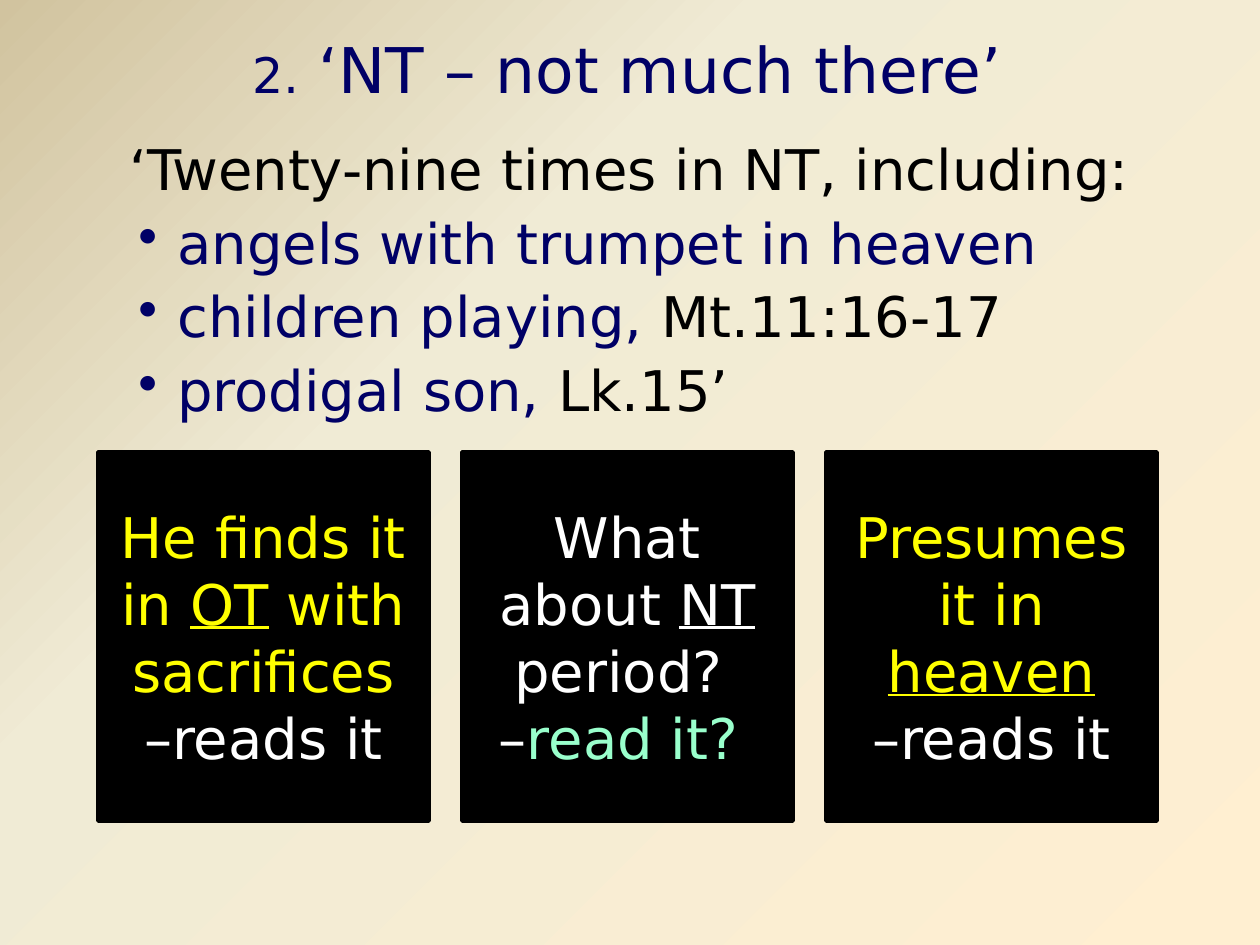
from copy import deepcopy

from lxml import etree
from pptx import Presentation
from pptx.dml.color import RGBColor
from pptx.enum.shapes import MSO_SHAPE
from pptx.enum.text import MSO_ANCHOR, MSO_AUTO_SIZE, PP_ALIGN
from pptx.oxml.ns import qn
from pptx.util import Pt

RECTANGLE = MSO_SHAPE.RECTANGLE
MIDDLE, TOP = MSO_ANCHOR.MIDDLE, MSO_ANCHOR.TOP
NO_AUTOFIT = MSO_AUTO_SIZE.NONE
CENTER = PP_ALIGN.CENTER

FONT = "DejaVu Sans"
NAVY, BLACK, WHITE = "000066", "000000", "FFFFFF"
YELLOW, MINT = "FFFF00", "99FFCC"
BACKGROUND_STOPS = [(0, "D1C39F"), (0.35, "F0EBD5"), (1, "FFEFD1")]

# Content: runs are (text, size, colour, underlined)
TITLE = [("2.", 28, NAVY, False), (" ‘NT – not much there’", 36, NAVY, False)]
INTRO = [("‘Twenty-nine times in NT, including:", 32, BLACK, False)]
BULLETS = [
    [("angels with trumpet in heaven", 32, NAVY, False)],
    [("children playing, ", 32, NAVY, False), ("Mt.11:16-17", 32, BLACK, False)],
    [("prodigal son, ", 32, NAVY, False), ("Lk.15’", 32, BLACK, False)],
]
LINE_BREAK = None
CARDS = [
    [("He finds it in ", 32, YELLOW, False), ("OT", 32, YELLOW, True),
     (" with sacrifices ", 32, YELLOW, False), ("–reads it", 32, WHITE, False)],
    [("What about ", 32, WHITE, False), ("NT", 32, WHITE, True),
     (" period? ", 32, WHITE, False), LINE_BREAK,
     ("–", 32, WHITE, False), ("read it? ", 32, MINT, False)],
    [("Presumes it in ", 32, YELLOW, False), ("heaven", 32, YELLOW, True),
     LINE_BREAK, ("–reads it", 32, WHITE, False)],
]

# Layout in px
SLIDE_SIZE = (1260, 945)
TITLE_BOX = (60, 10, 1134, 116)
BODY_BOX = (63, 136, 1134, 740)
CARD_LEFT, CARD_TOP, CARD_WIDTH, CARD_HEIGHT, CARD_STEP = 98, 452, 331, 369, 364
BULLET_LEFT, BULLET_HANG = 102, 39


def px(value):
    return round(value * 914400 / 126)


def colour(value):
    return RGBColor.from_string(value)


def place(shape, box):
    shape.left, shape.top, shape.width, shape.height = map(px, box)


def prepare_frame(shape, anchor):
    frame = shape.text_frame
    frame.word_wrap = True
    frame.auto_size = NO_AUTOFIT
    frame.vertical_anchor = anchor
    return frame


def write_runs(paragraph, runs):
    for item in runs:
        if item is LINE_BREAK:
            paragraph.add_line_break()
            continue
        text, size, text_colour, underlined = item
        run = paragraph.add_run()
        run.text = text
        run.font.name = FONT
        run.font.size = Pt(size)
        run.font.underline = underlined
        run.font.color.rgb = colour(text_colour)


def add_bullet(paragraph):
    properties = paragraph._p.get_or_add_pPr()
    properties.set("marL", str(px(BULLET_LEFT)))
    properties.set("indent", str(-px(BULLET_HANG)))
    etree.SubElement(properties, qn("a:buChar")).set("char", "•")


presentation = Presentation()
presentation.slide_width, presentation.slide_height = map(px, SLIDE_SIZE)
slide = presentation.slides.add_slide(presentation.slide_layouts[5])

# Background gradient
fill = slide.background.fill
fill.gradient()
fill.gradient_angle = 315
stop_list = next(slide._element.iter(qn("a:gsLst")))
stop_list.append(deepcopy(stop_list[-1]))
for stop, (position, stop_colour) in zip(fill.gradient_stops, BACKGROUND_STOPS):
    stop.position = position
    stop.color.rgb = colour(stop_colour)

# Title
title = slide.shapes.title
place(title, TITLE_BOX)
paragraph = prepare_frame(title, MIDDLE).paragraphs[0]
paragraph.alignment = CENTER
write_runs(paragraph, TITLE)

# Introduction and bullets
body = slide.shapes.add_textbox(*map(px, BODY_BOX))
frame = prepare_frame(body, TOP)
intro = frame.paragraphs[0]
intro.alignment = CENTER
intro.line_spacing = 0.9
write_runs(intro, INTRO)
for runs in BULLETS:
    paragraph = frame.add_paragraph()
    add_bullet(paragraph)
    paragraph.line_spacing = 0.9
    paragraph.space_before = Pt(7.5)
    write_runs(paragraph, runs)

# Three cards
for index, runs in enumerate(CARDS):
    box = (CARD_LEFT + index * CARD_STEP, CARD_TOP, CARD_WIDTH, CARD_HEIGHT)
    card = slide.shapes.add_shape(RECTANGLE, *map(px, box))
    card.shadow.inherit = False
    card.fill.solid()
    card.fill.fore_color.rgb = colour(BLACK)
    card.line.color.rgb = colour(BLACK)
    card.line.width = Pt(2)
    paragraph = prepare_frame(card, MIDDLE).paragraphs[0]
    paragraph.alignment = CENTER
    write_runs(paragraph, runs)

presentation.save("out.pptx")
